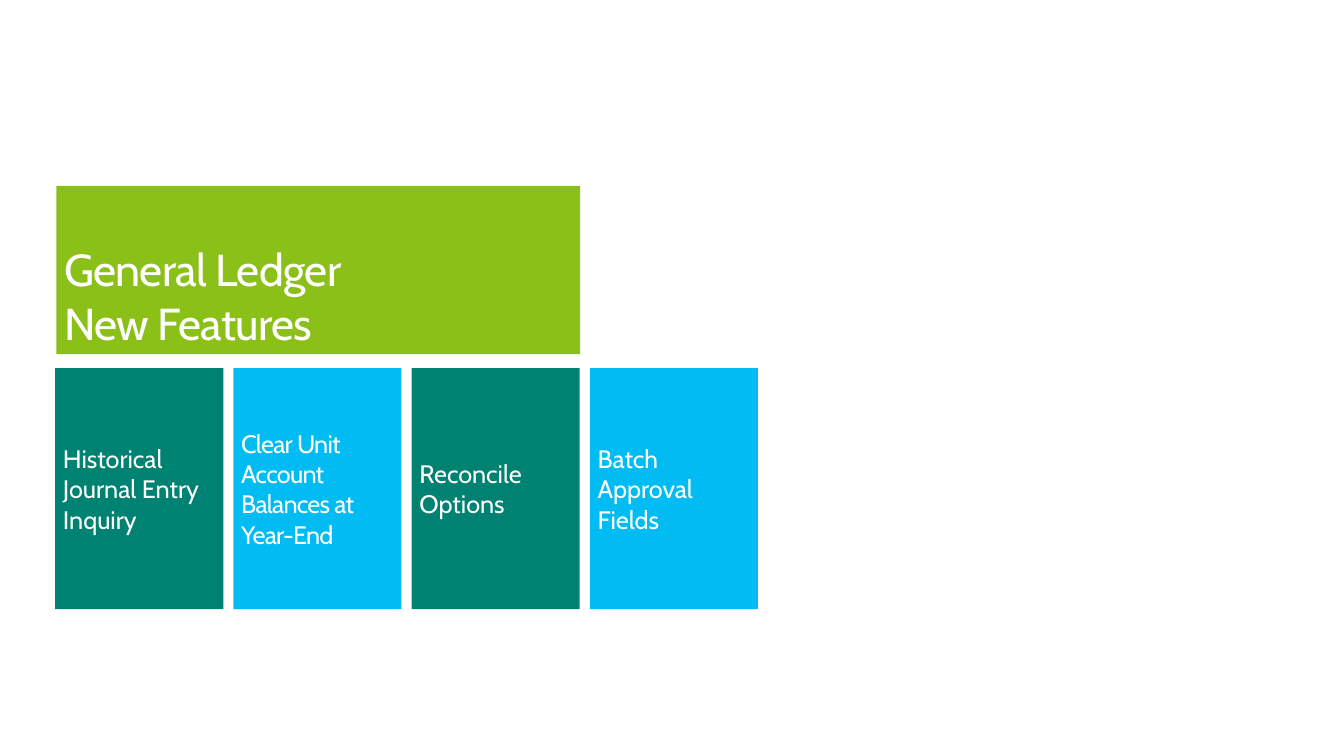
from pptx import Presentation
from pptx.dml.color import RGBColor
from pptx.enum.shapes import MSO_SHAPE
from pptx.enum.text import MSO_ANCHOR, MSO_AUTO_SIZE, PP_ALIGN
from pptx.util import Cm, Pt

GREEN, TEAL, BLUE, WHITE = "8BC019", "008272", "00BCF2", "FFFFFF"
TILE_LEFT, TILE_TOP, TILE_STEP = 1.42, 9.46, 4.58
TILE_WIDTH, TILE_HEIGHT = 4.32, 6.2

# Text, fill and letter spacing in points
FEATURES = [
    ("Historical Journal Entry Inquiry", TEAL, 0),
    ("Clear Unit Account Balances at Year-End", BLUE, -0.5),
    ("Reconcile Options", TEAL, 0),
    ("Batch Approval Fields", BLUE, 0),
]


def color(hex_string):
    return RGBColor.from_string(hex_string)


class TileSlide:
    """Holds the text style and the slide that the tiles are placed on."""

    font_name = "Cabin"
    title_size = 32.6
    tile_size = 18.4

    def __init__(self, presentation):
        self.slide = presentation.slides.add_slide(presentation.slide_layouts[5])

    def fill(self, shape, fill_color, anchor):
        shape.fill.solid()
        shape.fill.fore_color.rgb = color(fill_color)
        shape.line.fill.background()
        frame = shape.text_frame
        frame.word_wrap = True
        frame.auto_size = MSO_AUTO_SIZE.NONE
        frame.vertical_anchor = anchor
        frame.margin_left = frame.margin_right = Cm(0.2)
        frame.margin_top = frame.margin_bottom = Cm(0.13)

    def add_run(self, paragraph, text, size, spacing):
        run = paragraph.add_run()
        run.text = text
        run.font.name = self.font_name
        run.font.size = Pt(size)
        run.font.color.rgb = color(WHITE)
        if spacing:
            run.font._element.set("spc", str(round(spacing * 100)))

    def title(self, lines, left, top, width, height):
        shape = self.slide.shapes.title
        shape.left, shape.top = Cm(left), Cm(top)
        shape.width, shape.height = Cm(width), Cm(height)
        self.fill(shape, GREEN, MSO_ANCHOR.BOTTOM)
        paragraph = shape.text_frame.paragraphs[0]
        paragraph.alignment = PP_ALIGN.LEFT
        for index, line in enumerate(lines):
            if index:
                paragraph.add_line_break()
            self.add_run(paragraph, line, self.title_size, -0.5)

    def tile(self, text, fill_color, spacing, left):
        shape = self.slide.shapes.add_shape(
            MSO_SHAPE.RECTANGLE, Cm(left), Cm(TILE_TOP), Cm(TILE_WIDTH), Cm(TILE_HEIGHT)
        )
        shape.shadow.inherit = False
        self.fill(shape, fill_color, MSO_ANCHOR.MIDDLE)
        paragraph = shape.text_frame.paragraphs[0]
        paragraph.alignment = PP_ALIGN.LEFT
        self.add_run(paragraph, text, self.tile_size, spacing)


def main():
    presentation = Presentation()
    presentation.slide_width, presentation.slide_height = Cm(34.54), Cm(19.43)
    features_slide = TileSlide(presentation)
    features_slide.title(["General Ledger", "New Features"], 1.45, 4.78, 13.46, 4.32)
    for index, (text, fill_color, spacing) in enumerate(FEATURES):
        features_slide.tile(text, fill_color, spacing, TILE_LEFT + index * TILE_STEP)
    presentation.save("out.pptx")


if __name__ == "__main__":
    main()
